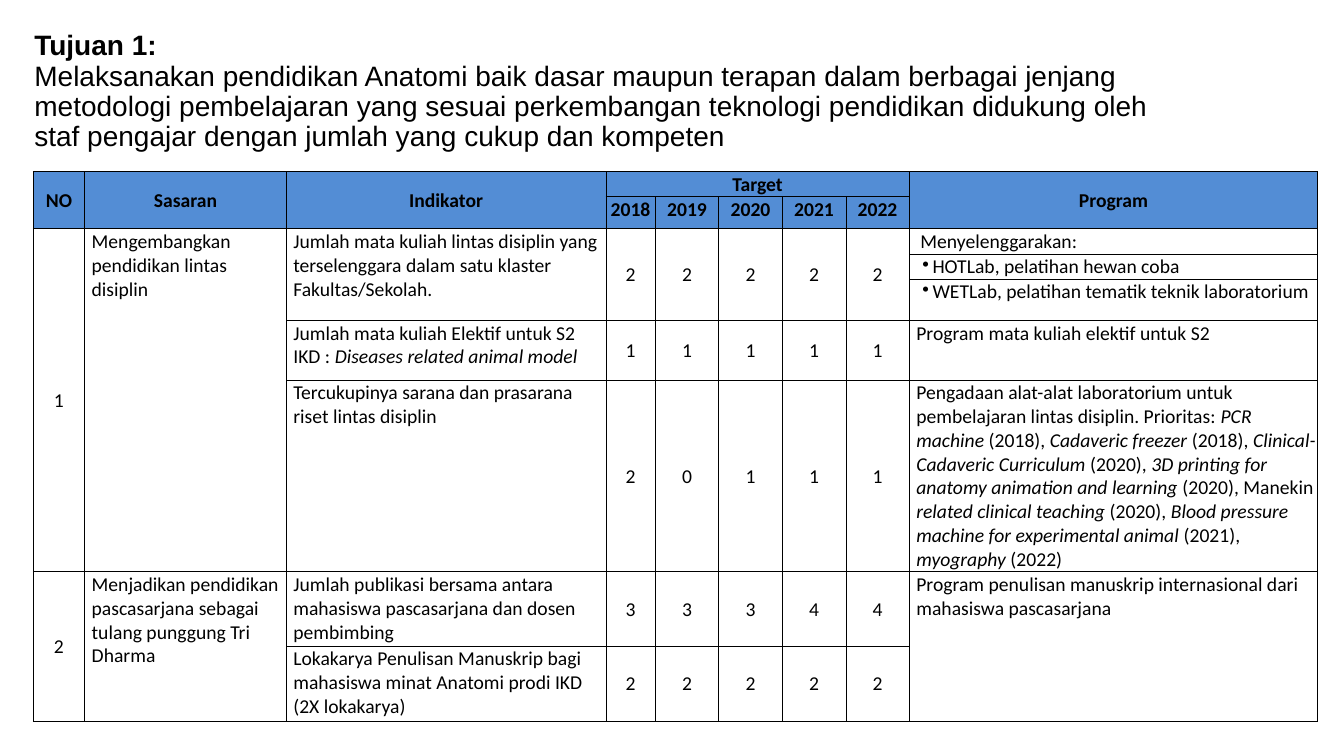
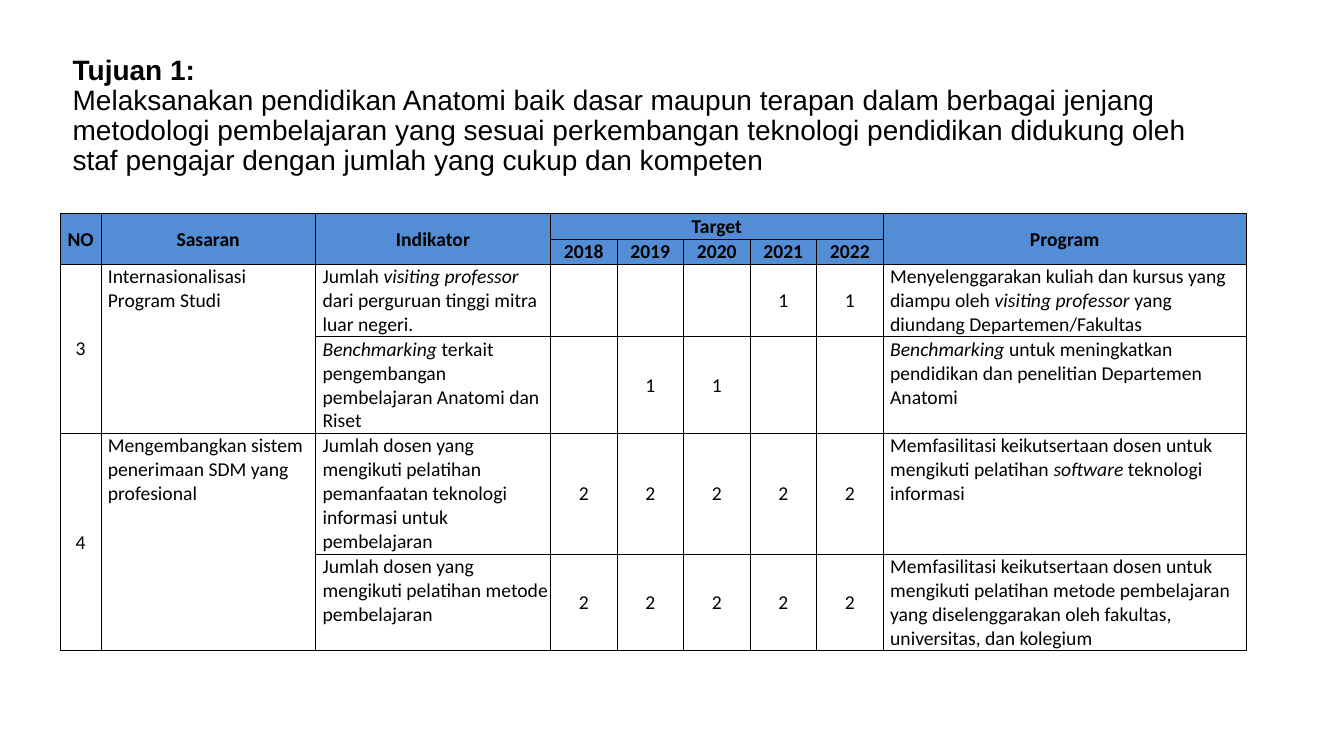
import copy
import dataclasses

import pptx
import pptx.dml.color
import pptx.enum.text
import pptx.oxml
import pptx.oxml.ns
import pptx.util

Inches, Pt = pptx.util.Inches, pptx.util.Pt
Align, Anchor = pptx.enum.text.PP_ALIGN, pptx.enum.text.MSO_ANCHOR
qn = pptx.oxml.ns.qn


@dataclasses.dataclass(frozen=True)
class Theme:
    ink: str = "000000"
    paper: str = "FFFFFF"
    header: str = "538DD5"
    title_font: str = "Arial"
    table_font: str = "Calibri"
    title_size: int = 20
    table_size: int = 14
    border: float = 0.5
    inset: float = 0.01
    indent: float = 0.06


THEME = Theme()

# Cell marks: UP continues the cell above, LEFT the cell to the left.
# Text between asterisks is italic, a leading • makes a bullet.
UP, LEFT = None, "<"
TITLE_LEAD = "Tujuan 1:"
TITLE_TEXT = (
    "Melaksanakan pendidikan Anatomi baik dasar maupun terapan dalam berbagai jenjang "
    "metodologi pembelajaran yang sesuai perkembangan teknologi pendidikan didukung oleh "
    "staf pengajar dengan jumlah yang cukup dan kompeten"
)
TITLE_SIZE = (11.5, 1.45)
HEADER = [
    ["NO", "Sasaran", "Indikator", "Target", *[LEFT] * 4, "Program"],
    [UP, UP, UP, "2018", "2019", "2020", "2021", "2022", UP],
]
TARGET_COLUMNS = range(3, 8)

SLIDES = [
    {
        "title_at": (0.24, 0.19),
        "table_at": (0.33, 1.7),
        "columns": [0.51, 2, 3.17, 0.49, *[0.63] * 4, 4.05],
        "heights": [0.25, 0.32, 0.25, 0.25, 0.41, 0.59, 1.9, 0.74, 0.74],
        "rows": [
            ["1", "Mengembangkan pendidikan lintas disiplin",
             "Jumlah mata kuliah lintas disiplin yang terselenggara dalam satu klaster "
             "Fakultas/Sekolah.",
             *"22222", "Menyelenggarakan:"],
            [*[UP] * 8, "•HOTLab, pelatihan hewan coba"],
            [*[UP] * 8, "•WETLab, pelatihan tematik teknik laboratorium"],
            [UP, UP, "Jumlah mata kuliah Elektif untuk S2 IKD : *Diseases related animal model*",
             *"11111", "Program mata kuliah elektif untuk S2"],
            [UP, UP, "Tercukupinya sarana dan prasarana riset lintas disiplin",
             *"20111",
             "Pengadaan alat-alat laboratorium untuk pembelajaran lintas disiplin. Prioritas: "
             "*PCR machine* (2018), *Cadaveric freezer* (2018), "
             "*Clinical-Cadaveric Curriculum* (2020), "
             "*3D printing for anatomy animation and learning* (2020), "
             "Manekin *related clinical teaching* (2020), "
             "*Blood pressure machine for experimental animal* (2021), *myography* (2022)"],
            ["2", "Menjadikan pendidikan pascasarjana sebagai tulang punggung Tri Dharma",
             "Jumlah publikasi bersama antara mahasiswa pascasarjana dan dosen pembimbing",
             *"33344",
             "Program penulisan manuskrip internasional dari mahasiswa pascasarjana"],
            [UP, UP,
             "Lokakarya Penulisan Manuskrip bagi mahasiswa minat Anatomi prodi IKD (2X lokakarya)",
             *"22222", UP],
        ],
    },
    {
        "title_at": (0.62, 0.43),
        "table_at": (0.6, 2.12),
        "columns": [0.4, 2.13, 2.33, *[0.66] * 5, 3.6],
        "heights": [0.25, 0.25, 0.72, 0.95, 1.2, 0.95],
        "rows": [
            ["3", "Internasionalisasi Program Studi",
             "Jumlah *visiting professor* dari perguruan tinggi mitra luar negeri.",
             "", "", "", "1", "1",
             "Menyelenggarakan kuliah dan kursus yang diampu oleh *visiting professor* yang "
             "diundang Departemen/Fakultas"],
            [UP, UP, "*Benchmarking* terkait pengembangan pembelajaran Anatomi dan Riset",
             "", "1", "1", "", "",
             "*Benchmarking* untuk meningkatkan pendidikan dan penelitian Departemen Anatomi"],
            ["4", "Mengembangkan sistem penerimaan SDM yang profesional",
             "Jumlah dosen yang mengikuti pelatihan pemanfaatan teknologi informasi untuk "
             "pembelajaran",
             *"22222",
             "Memfasilitasi keikutsertaan dosen untuk mengikuti pelatihan *software* "
             "teknologi informasi"],
            [UP, UP, "Jumlah dosen yang mengikuti pelatihan metode pembelajaran",
             *"22222",
             "Memfasilitasi keikutsertaan dosen untuk mengikuti pelatihan metode pembelajaran "
             "yang diselenggarakan oleh fakultas, universitas, dan kolegium"],
        ],
    },
]


def color(value):
    return pptx.dml.color.RGBColor.from_string(value)


def write(paragraph, text, *, font=THEME.table_font, size=THEME.table_size, bold=False):
    """Add text as runs; parts between asterisks become italic."""
    for index, part in enumerate(text.split("*")):
        if part:
            run = paragraph.add_run()
            run.text = part
            run.font.name = font
            run.font.size = Pt(size)
            run.font.bold = bold
            run.font.italic = index % 2 == 1
            run.font.color.rgb = color(THEME.ink)


def set_indent(paragraph, left, bullet=None, hanging=0):
    properties = paragraph._p.get_or_add_pPr()
    properties.set("marL", str(Inches(left)))
    properties.set("indent", str(-Inches(hanging)))
    if bullet:
        mark = pptx.oxml.parse_xml(
            f'<a:buChar {pptx.oxml.ns.nsdecls("a")} char="{bullet}"/>')
        properties.append(mark)


def border_lines():
    return [
        pptx.oxml.parse_xml(
            f'<a:{side} {pptx.oxml.ns.nsdecls("a")} w="{Pt(THEME.border)}"><a:solidFill>'
            f'<a:srgbClr val="{THEME.ink}"/></a:solidFill></a:{side}>')
        for side in ("lnL", "lnR", "lnT", "lnB")
    ]


BORDERS = border_lines()


def style_cell(cell, fill):
    cell.margin_left = cell.margin_top = cell.margin_right = Inches(THEME.inset)
    cell.margin_bottom = 0
    cell._tc.get_or_add_tcPr().extend(copy.deepcopy(BORDERS))
    cell.fill.solid()
    cell.fill.fore_color.rgb = color(fill)


def fill_cell(cell, text, column, is_header):
    paragraph = cell.text_frame.paragraphs[0]
    is_target = column in TARGET_COLUMNS
    if is_header or is_target or column == 0:
        paragraph.alignment = Align.CENTER
        if not (is_header and is_target):
            cell.vertical_anchor = Anchor.MIDDLE
    elif text.startswith("•"):
        set_indent(paragraph, 0.22, bullet="•", hanging=0.1)
        text = text[1:]
    else:
        has_list = text.endswith(":")
        set_indent(paragraph, 0.1 if has_list else THEME.indent)
    write(paragraph, text, bold=is_header)


def merge_spans(table, rows, row, column):
    """Join a cell with the UP and LEFT marks that follow it."""
    last_row, last_column = row, column
    while last_row + 1 < len(rows) and rows[last_row + 1][column] is UP:
        last_row += 1
    while last_column + 1 < len(rows[row]) and rows[row][last_column + 1] == LEFT:
        last_column += 1
    if (last_row, last_column) != (row, column):
        table.cell(row, column).merge(table.cell(last_row, last_column))


def add_target_table(slide, content):
    rows = HEADER + content["rows"]
    columns, heights = content["columns"], content["heights"]
    left, top = content["table_at"]
    table = slide.shapes.add_table(
        len(rows), len(columns), Inches(left), Inches(top),
        Inches(sum(columns)), Inches(sum(heights))).table
    table.horz_banding = False
    for column, width in zip(table.columns, columns):
        column.width = Inches(width)
    for row, height in zip(table.rows, heights):
        row.height = Inches(height)
    for row, values in enumerate(rows):
        is_header = row < len(HEADER)
        for column, text in enumerate(values):
            cell = table.cell(row, column)
            style_cell(cell, THEME.header if is_header else THEME.paper)
            if text not in (UP, LEFT):
                fill_cell(cell, text, column, is_header)
                merge_spans(table, rows, row, column)


def set_title_style(presentation):
    level = presentation.slide_master.element.find(
        f".//{qn('p:titleStyle')}/{qn('a:lvl1pPr')}")
    level.set("algn", "l")
    level.find(qn("a:defRPr")).set("sz", str(THEME.title_size * 100))


def add_title(slide, position):
    title = slide.shapes.title
    title.left, title.top = map(Inches, position)
    title.width, title.height = map(Inches, TITLE_SIZE)
    frame = title.text_frame
    frame.auto_size = pptx.enum.text.MSO_AUTO_SIZE.NONE
    frame.vertical_anchor = Anchor.MIDDLE
    paragraph = frame.paragraphs[0]
    paragraph.line_spacing = 0.9
    style = {"font": THEME.title_font, "size": THEME.title_size}
    write(paragraph, TITLE_LEAD, bold=True, **style)
    paragraph.add_line_break()
    write(paragraph, TITLE_TEXT, **style)


def main():
    presentation = pptx.Presentation()
    presentation.slide_width = Inches(13.33)
    presentation.slide_height = Inches(7.5)
    set_title_style(presentation)
    title_only = presentation.slide_layouts.get_by_name("Title Only")
    for content in SLIDES:
        slide = presentation.slides.add_slide(title_only)
        add_title(slide, content["title_at"])
        add_target_table(slide, content)
    presentation.save("out.pptx")


if __name__ == "__main__":
    main()
